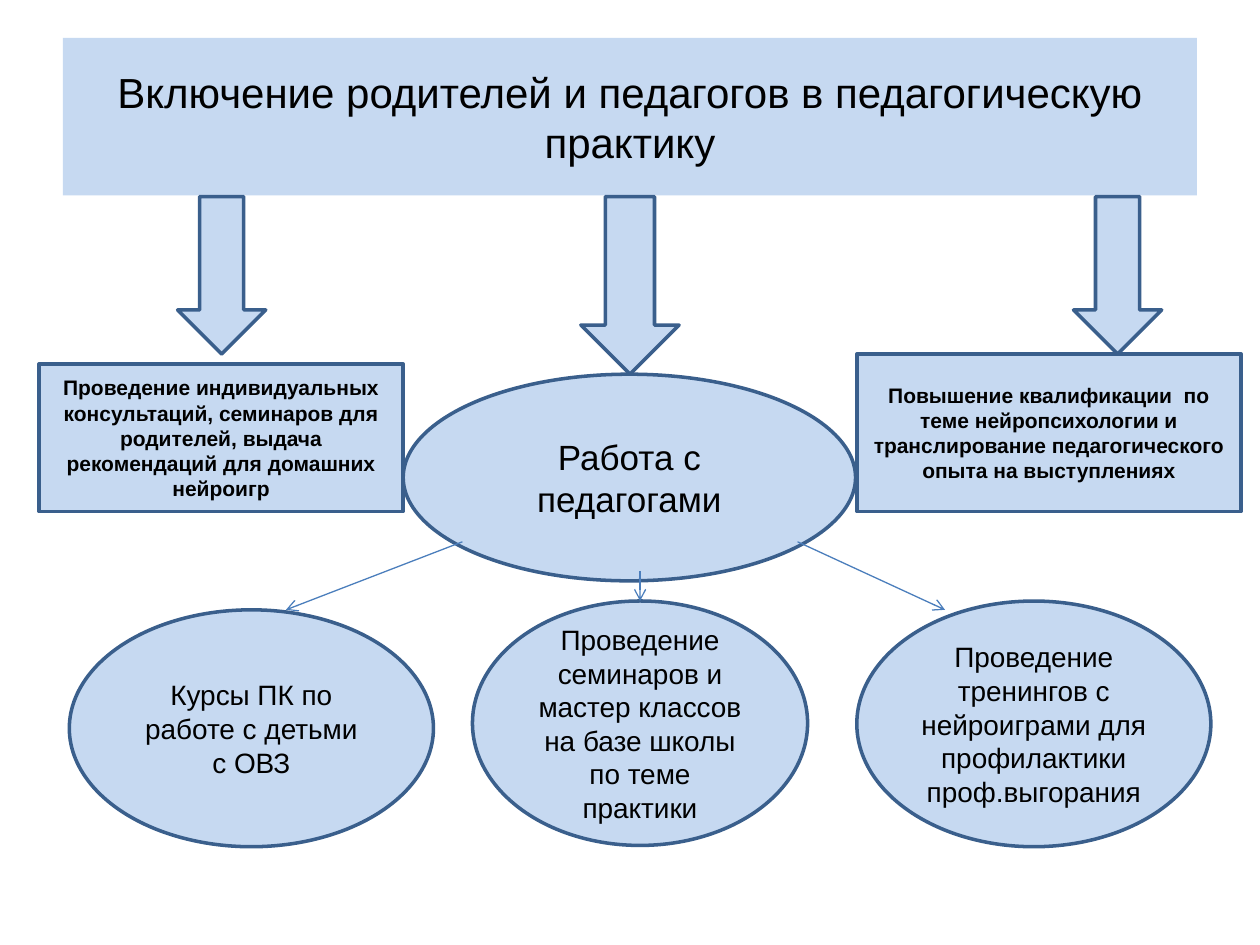
import pptx
import pptx.util
import pptx.dml.color
import pptx.enum.shapes
import pptx.enum.text
import pptx.oxml
import pptx.oxml.ns

Inches = pptx.util.Inches
Pt = pptx.util.Pt
RGBColor = pptx.dml.color.RGBColor
SHAPE = pptx.enum.shapes.MSO_SHAPE

PALE_BLUE = RGBColor(0xC6, 0xD9, 0xF1)
DARK_BLUE = RGBColor(0x3A, 0x5F, 0x8C)
ARROW_BLUE = RGBColor(0x4B, 0x7E, 0xBC)
BLACK = RGBColor(0, 0, 0)

deck = pptx.Presentation()
deck.slide_width = Inches(10)
deck.slide_height = Inches(7.5)
slide = deck.slides.add_slide(deck.slide_layouts[6])


def add_block(kind, left, top, width, height, text="", size=16, bold=False):
    """Add a pale blue outlined shape with centred text."""
    block = slide.shapes.add_shape(
        kind, Inches(left), Inches(top), Inches(width), Inches(height))
    block.shadow.inherit = False
    block.fill.solid()
    block.fill.fore_color.rgb = PALE_BLUE
    block.line.color.rgb = DARK_BLUE
    block.line.width = Pt(2)
    if text:
        frame = block.text_frame
        frame.text = text
        frame.word_wrap = True
        frame.vertical_anchor = pptx.enum.text.MSO_ANCHOR.MIDDLE
        para = frame.paragraphs[0]
        para.alignment = pptx.enum.text.PP_ALIGN.CENTER
        font = para.runs[0].font
        font.name = "Arial"
        font.size = Pt(size)
        font.bold = bold
        font.color.rgb = BLACK
    return block


title = add_block(SHAPE.RECTANGLE, 0.5, 0.3, 9, 1.25,
                  "Включение родителей и педагогов в педагогическую практику", 24)
title.line.fill.background()

# Block arrows from the title to the three directions of work
for left, width, height in [(4.61, 0.78, 1.41), (1.41, 0.7, 1.25), (8.52, 0.7, 1.25)]:
    add_block(SHAPE.DOWN_ARROW, left, 1.56, width, height)

add_block(SHAPE.OVAL, 3.2, 2.97, 3.59, 1.64, "Работа с педагогами", 20)
add_block(SHAPE.RECTANGLE, 0.31, 2.89, 2.89, 1.17,
          "Проведение индивидуальных консультаций, семинаров для родителей, "
          "выдача рекомендаций для домашних нейроигр", 12, True)
add_block(SHAPE.RECTANGLE, 6.8, 2.81, 3.05, 1.25,
          "Повышение квалификации  по теме нейропсихологии и транслирование "
          "педагогического опыта на выступлениях", 12, True)

# Forms of work with teachers
add_block(SHAPE.OVAL, 0.55, 4.84, 2.89, 1.88, "Курсы ПК по работе с детьми с ОВЗ")
add_block(SHAPE.OVAL, 3.75, 4.77, 2.66, 1.94,
          "Проведение семинаров и мастер классов на базе школы по теме практики")
add_block(SHAPE.OVAL, 6.8, 4.77, 2.81, 1.95,
          "Проведение тренингов с нейроиграми для профилактики проф.выгорания")

for start_x, start_y, end_x, end_y in [
        (3.67, 4.3, 2.27, 4.84), (6.33, 4.3, 7.5, 4.84), (5.08, 4.53, 5.08, 4.77)]:
    arrow = slide.shapes.add_connector(
        pptx.enum.shapes.MSO_CONNECTOR.STRAIGHT,
        Inches(start_x), Inches(start_y), Inches(end_x), Inches(end_y))
    arrow.line.color.rgb = ARROW_BLUE
    arrow.line.width = Pt(0.75)
    arrow_head = pptx.oxml.parse_xml(
        f'<a:tailEnd {pptx.oxml.ns.nsdecls("a")} type="arrow"/>')
    arrow.line._get_or_add_ln().append(arrow_head)
    no_shadow = pptx.oxml.parse_xml(f'<a:effectLst {pptx.oxml.ns.nsdecls("a")}/>')
    arrow._element.spPr.append(no_shadow)

deck.save("out.pptx")
